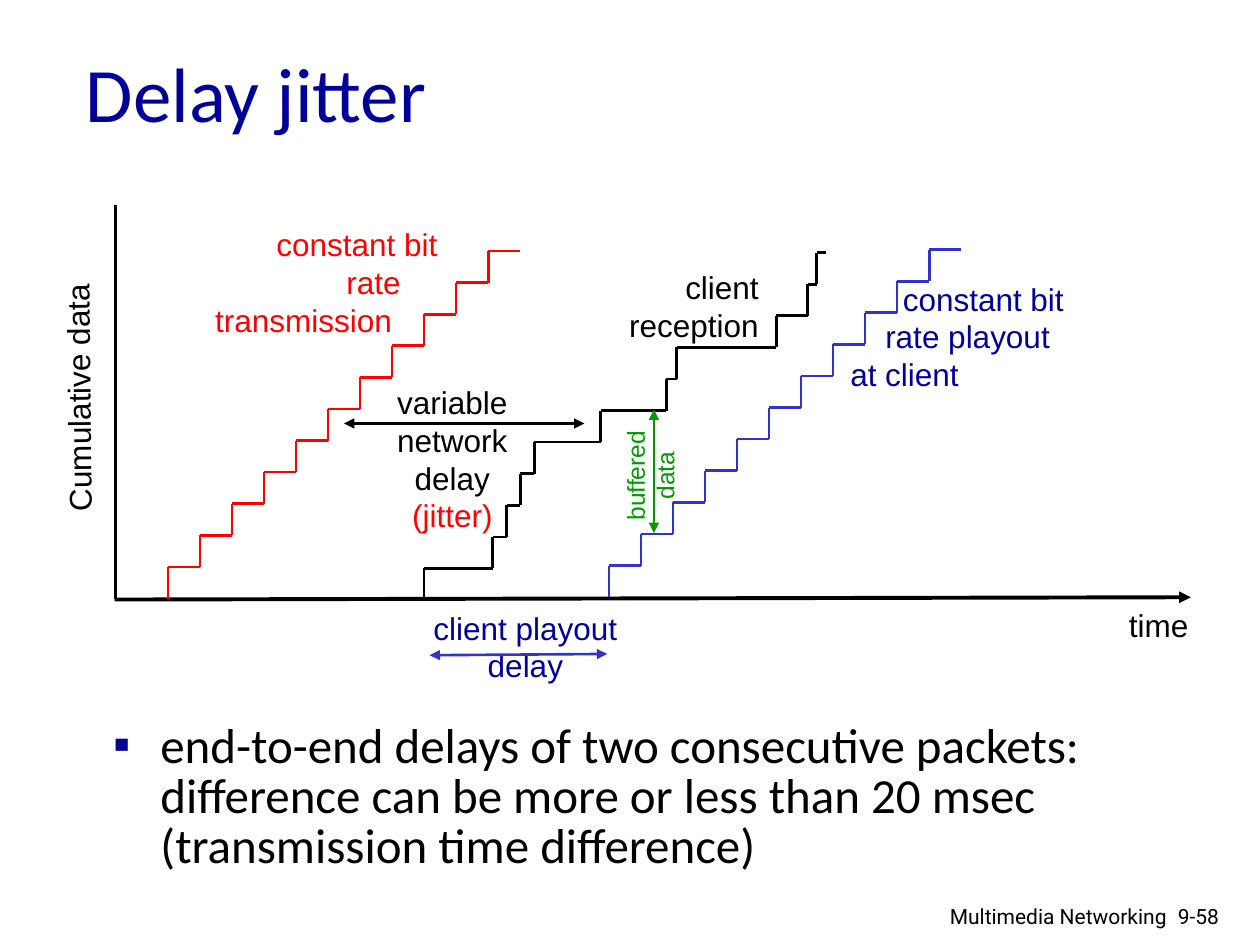
import pptx
import pptx.util
import pptx.dml.color
import pptx.enum.shapes
import pptx.enum.text
import pptx.oxml.ns
from lxml import etree

Pt = pptx.util.Pt
ALIGN = pptx.enum.text.PP_ALIGN
ANCHOR = pptx.enum.text.MSO_ANCHOR

BLACK, RED, NAVY, BLUE, GREEN = "000000", "FF0000", "000099", "3333CC", "009900"
AXIS_Y = 342
STEP_WIDTH, STEP_HEIGHT = 18.3, 18.05
STEP_COUNT = 11


def color(hex_value):
    return pptx.dml.color.RGBColor.from_string(hex_value)


def add_element(parent, tag, **attributes):
    return etree.SubElement(parent, pptx.oxml.ns.qn(tag), attributes)


def format_paragraph(paragraph, text, font="Arial", size=18, hex_color=BLACK,
                     align=ALIGN.LEFT, spacing=None, indent=0, bullet=None):
    """Fill one paragraph and format it."""
    paragraph.text = text
    paragraph.alignment = align
    if spacing:
        paragraph.line_spacing = spacing
    properties = paragraph._p.get_or_add_pPr()
    if indent:
        properties.set("marL", str(Pt(indent)))
    if bullet:
        properties.set("indent", str(-Pt(indent)))
        bullet_color = add_element(properties, "a:buClr")
        add_element(bullet_color, "a:srgbClr", val=NAVY)
        add_element(properties, "a:buFont", typeface="Arial")
        add_element(properties, "a:buChar", char=bullet)
    paragraph.font.name = font
    paragraph.font.size = Pt(size)
    paragraph.font.color.rgb = color(hex_color)


def add_text(slide, text, left, top, width, height, rotation=0, wrap=True,
             indents=None, last_color=None, **text_format):
    """Add a text box with one paragraph for each line of the text."""
    shape = slide.shapes.add_textbox(Pt(left), Pt(top), Pt(width), Pt(height))
    shape.rotation = rotation
    frame = shape.text_frame
    frame.word_wrap = wrap
    lines = text.split("\n")
    for index, line in enumerate(lines):
        paragraph = frame.add_paragraph() if index else frame.paragraphs[0]
        line_format = dict(text_format)
        if indents:
            line_format["indent"] = indents[index]
        if last_color and index == len(lines) - 1:
            line_format["hex_color"] = last_color
        format_paragraph(paragraph, line, **line_format)


def add_label(slide, text, *box, size=18, **text_format):
    """Add a diagram label with an even line pitch."""
    add_text(slide, text, *box, size=size, spacing=Pt(1.2 * size), **text_format)


def add_line(slide, start, end, hex_color=BLACK, width=1.5, head=False, tail=False):
    connector = slide.shapes.add_connector(
        pptx.enum.shapes.MSO_CONNECTOR.STRAIGHT,
        Pt(start[0]), Pt(start[1]), Pt(end[0]), Pt(end[1]))
    connector.line.color.rgb = color(hex_color)
    connector.line.width = Pt(width)
    outline = connector.line._get_or_add_ln()
    if head:
        add_element(outline, "a:headEnd", type="triangle")
    if tail:
        add_element(outline, "a:tailEnd", type="triangle")
    add_element(connector._element.spPr, "a:effectLst")


def add_double_arrow(slide, start, end, hex_color):
    add_line(slide, start, end, hex_color, head=True, tail=True)


def add_staircase(slide, edges, base, hex_color):
    """Draw a riser at each edge and a tread on to the next edge."""
    for index, (left, right) in enumerate(zip(edges, edges[1:])):
        bottom = base - index * STEP_HEIGHT
        top = bottom - STEP_HEIGHT
        add_line(slide, (left, bottom), (left, top), hex_color)
        add_line(slide, (left, top), (right, top), hex_color)


def even_edges(start):
    return [start + index * STEP_WIDTH for index in range(STEP_COUNT + 1)]


def add_title(slide, text):
    title = slide.shapes.title
    title.left, title.top, title.width, title.height = Pt(41.8), Pt(18), Pt(643), Pt(68.4)
    title.text_frame.vertical_anchor = ANCHOR.MIDDLE
    format_paragraph(title.text_frame.paragraphs[0], text,
                     font="Calibri", size=44, hex_color=NAVY)


def main():
    presentation = pptx.Presentation()
    presentation.slide_width, presentation.slide_height = Pt(720), Pt(540)
    slide = presentation.slides.add_slide(presentation.slide_layouts[5])
    add_title(slide, "Delay jitter")

    # Axes
    add_line(slide, (66, 117.4), (66, AXIS_Y), width=2.25)
    add_line(slide, (65.5, 342.6), (680.5, 341.3), width=2.25, tail=True)
    add_label(slide, "Cumulative data", -32.4, 208, 154, 28.8, rotation=269.4)
    add_label(slide, "time", 638, 342.7, 49, 28.8, wrap=False)

    # Staircases: sent at a constant rate, received unevenly, played out evenly
    reception_edges = [242.2, 281.6, 289.6, 297.4, 305.3, 343.3,
                       380.8, 386.6, 443.6, 461.5, 466.6, 472.3]
    add_staircase(slide, even_edges(96), AXIS_Y, RED)
    add_staircase(slide, reception_edges, 342.9, BLACK)
    add_staircase(slide, even_edges(348), 341.2, BLUE)

    # Staircase labels
    add_label(slide, "constant bit\nrate\ntransmission", 115.9, 125.3, 147, 72.7,
              indents=[35, 75, 0], hex_color=RED)
    add_label(slide, "client\nreception", 351.4, 149.8, 89.3, 51.1,
              wrap=False, align=ALIGN.RIGHT)
    add_label(slide, "constant bit\nrate playout\nat client", 473.8, 156.2, 147, 72.7,
              indents=[35, 25, 5], hex_color=NAVY)

    # Delays and buffer between the staircases
    add_label(slide, "variable\nnetwork\ndelay\n(jitter)", 218.9, 215.3, 79.2, 94.3,
              wrap=False, align=ALIGN.CENTER, last_color=RED)
    add_double_arrow(slide, (196.6, 242), (334, 242), BLACK)
    add_label(slide, "client playout\ndelay", 234, 344.2, 132.5, 50.4,
              align=ALIGN.CENTER, hex_color=NAVY)
    add_double_arrow(slide, (245.5, 374.4), (347, 373.7), BLUE)
    add_double_arrow(slide, (373.7, 304.6), (373.7, 234), GREEN)
    add_label(slide, "buffered\ndata", 338.4, 251.3, 66.2, 41, size=14, rotation=270,
              wrap=False, align=ALIGN.CENTER, hex_color=GREEN)

    # Body text
    add_text(slide, "end-to-end delays of two consecutive packets: difference can be more "
             "or less than 20 msec (transmission time difference)",
             57.6, 409.7, 612, 69.8, font="Calibri", size=28, spacing=0.85,
             indent=27, bullet="▪")

    # Footer
    add_text(slide, "9-58", 666, 512.6, 54, 21.6, font="Roboto", size=12)
    add_text(slide, "Multimedia Networking", 518.4, 512.6, 155.5, 20.2,
             font="Roboto", size=12, align=ALIGN.RIGHT)

    presentation.save("out.pptx")


if __name__ == "__main__":
    main()
